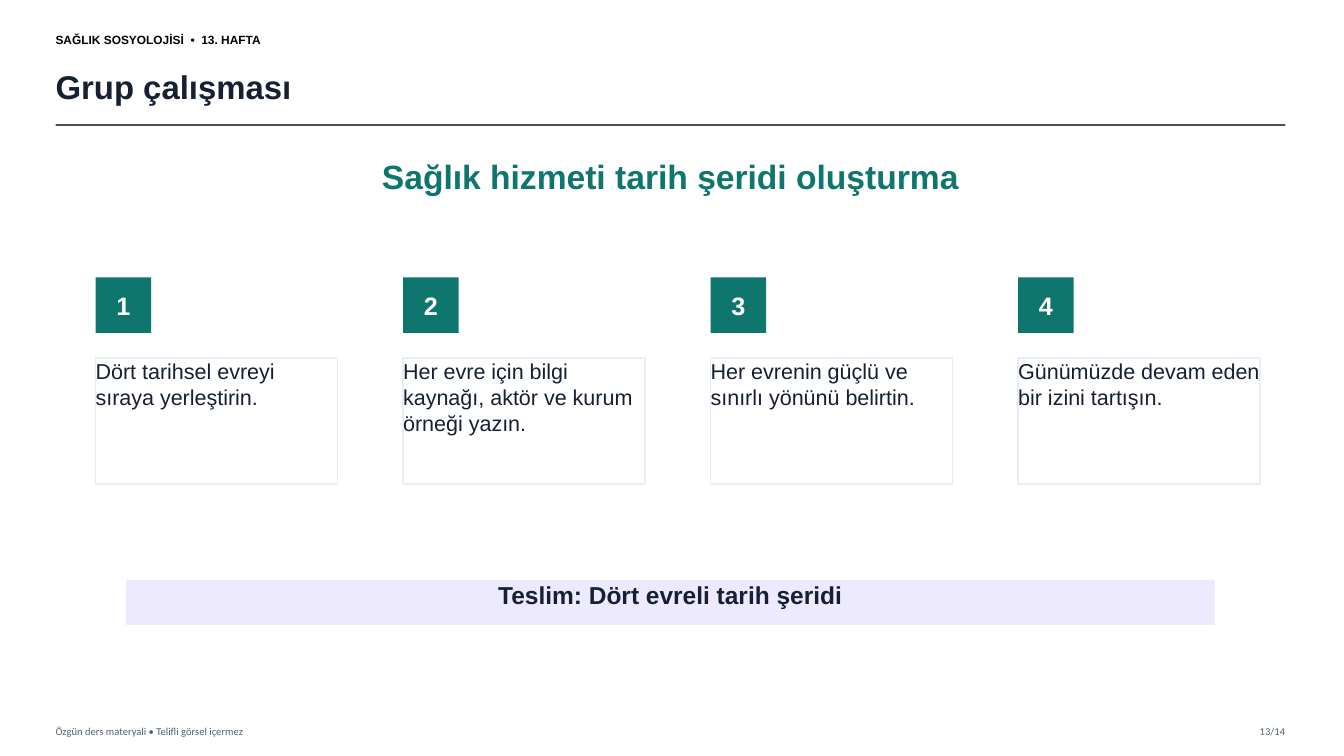
from lxml import etree
from pptx import Presentation
from pptx.dml.color import RGBColor
from pptx.enum.shapes import MSO_CONNECTOR, MSO_SHAPE
from pptx.enum.text import MSO_ANCHOR, MSO_AUTO_SIZE, PP_ALIGN
from pptx.oxml.ns import qn
from pptx.util import Cm, Pt

LEFT, CENTER, RIGHT = PP_ALIGN.LEFT, PP_ALIGN.CENTER, PP_ALIGN.RIGHT
TOP, MIDDLE = MSO_ANCHOR.TOP, MSO_ANCHOR.MIDDLE
RECTANGLE, STRAIGHT = MSO_SHAPE.RECTANGLE, MSO_CONNECTOR.STRAIGHT
NO_AUTOFIT = MSO_AUTO_SIZE.NONE
TITLE_ONLY = 5

INK, TEAL, GREY = "172033", "0F766E", "506070"
WHITE, BLACK, RULE = "FFFFFF", "000000", "333333"
LAVENDER, CARD_BORDER = "EDE9FE", "E8EEF5"

MARGIN, RIGHT_EDGE = 1.4, 32.39
STEP_LEFT, STEP_PITCH = 2.41, 7.75
STEPS = [
    "Dört tarihsel evreyi sıraya yerleştirin.",
    "Her evre için bilgi kaynağı, aktör ve kurum örneği yazın.",
    "Her evrenin güçlü ve sınırlı yönünü belirtin.",
    "Günümüzde devam eden bir izini tartışın.",
]


def color(hex_string):
    return RGBColor.from_string(hex_string)


def write(shape, text, size, ink=INK, bold=False, align=LEFT, anchor=MIDDLE, font="Arial"):
    """Fill a shape with one paragraph, without inner margins."""
    frame = shape.text_frame
    frame.text = text
    frame.word_wrap = True
    frame.auto_size = NO_AUTOFIT
    frame.vertical_anchor = anchor
    frame.margin_left = frame.margin_right = frame.margin_top = frame.margin_bottom = 0
    para = frame.paragraphs[0]
    para.alignment = align
    for span in para.runs:
        span.font.name = font
        span.font.size = Pt(size)
        span.font.bold = bold
        span.font.color.rgb = color(ink)


def add_label(page, place, text, size, **style):
    box = page.shapes.add_textbox(*map(Cm, place))
    write(box, text, size, **style)


def add_panel(page, place, text, size, fill, border=None, **style):
    panel = page.shapes.add_shape(RECTANGLE, *map(Cm, place))
    panel.shadow.inherit = False
    panel.fill.solid()
    panel.fill.fore_color.rgb = color(fill)
    if border:
        panel.line.color.rgb = color(border)
        panel.line.width = Pt(1)
    else:
        panel.line.fill.background()
    write(panel, text, size, **style)


def add_title(page, text):
    title = page.shapes.title
    title.left, title.top, title.width, title.height = map(Cm, (MARGIN, 1.47, 30.35, 1.4))
    write(title, text, 23.5, bold=True)


def add_rule(page, top):
    """Draw the slightly transparent line under the title."""
    rule = page.shapes.add_connector(STRAIGHT, Cm(MARGIN), Cm(top), Cm(RIGHT_EDGE), Cm(top))
    rule.line.color.rgb = color(RULE)
    rule.line.width = Pt(1.2)
    properties = rule._element.spPr
    shade = properties.find(".//" + qn("a:srgbClr"))
    etree.SubElement(shade, qn("a:alpha"), val="85000")
    etree.SubElement(properties, qn("a:effectLst"))


def add_step(page, index, text):
    left = STEP_LEFT + index * STEP_PITCH
    add_panel(page, (left, 6.99, 1.4, 1.4), str(index + 1), 18, TEAL,
              ink=WHITE, bold=True, align=CENTER)
    add_panel(page, (left, 9.02, 6.1, 3.18), text, 15.4, WHITE,
              border=CARD_BORDER, anchor=TOP)


def main():
    deck = Presentation()
    deck.slide_width, deck.slide_height = Cm(33.87), Cm(19.05)
    page = deck.slides.add_slide(deck.slide_layouts[TITLE_ONLY])
    page.background.fill.solid()
    page.background.fill.fore_color.rgb = color(WHITE)

    add_label(page, (MARGIN, 0.64, 9.14, 0.71), "SAĞLIK SOSYOLOJİSİ  •  13. HAFTA", 8.5,
              ink=BLACK, bold=True)
    add_title(page, "Grup çalışması")
    add_rule(page, 3.15)
    add_label(page, (MARGIN, 18.14, 15.24, 0.56),
              "Özgün ders materyali • Telifli görsel içermez", 7.5, ink=GREY, font="Calibri")
    add_label(page, (30.74, 18.14, 1.65, 0.56), "13/14", 7.5,
              ink=GREY, align=RIGHT, font="Calibri")

    add_label(page, (1.91, 3.94, 29.97, 1.65), "Sağlık hizmeti tarih şeridi oluşturma", 24,
              ink=TEAL, bold=True, align=CENTER, anchor=TOP)
    for index, text in enumerate(STEPS):
        add_step(page, index, text)
    add_panel(page, (3.18, 14.61, 27.43, 1.14), "Teslim: Dört evreli tarih şeridi", 17.5, LAVENDER,
              bold=True, align=CENTER, anchor=TOP)

    deck.save("out.pptx")


if __name__ == "__main__":
    main()
